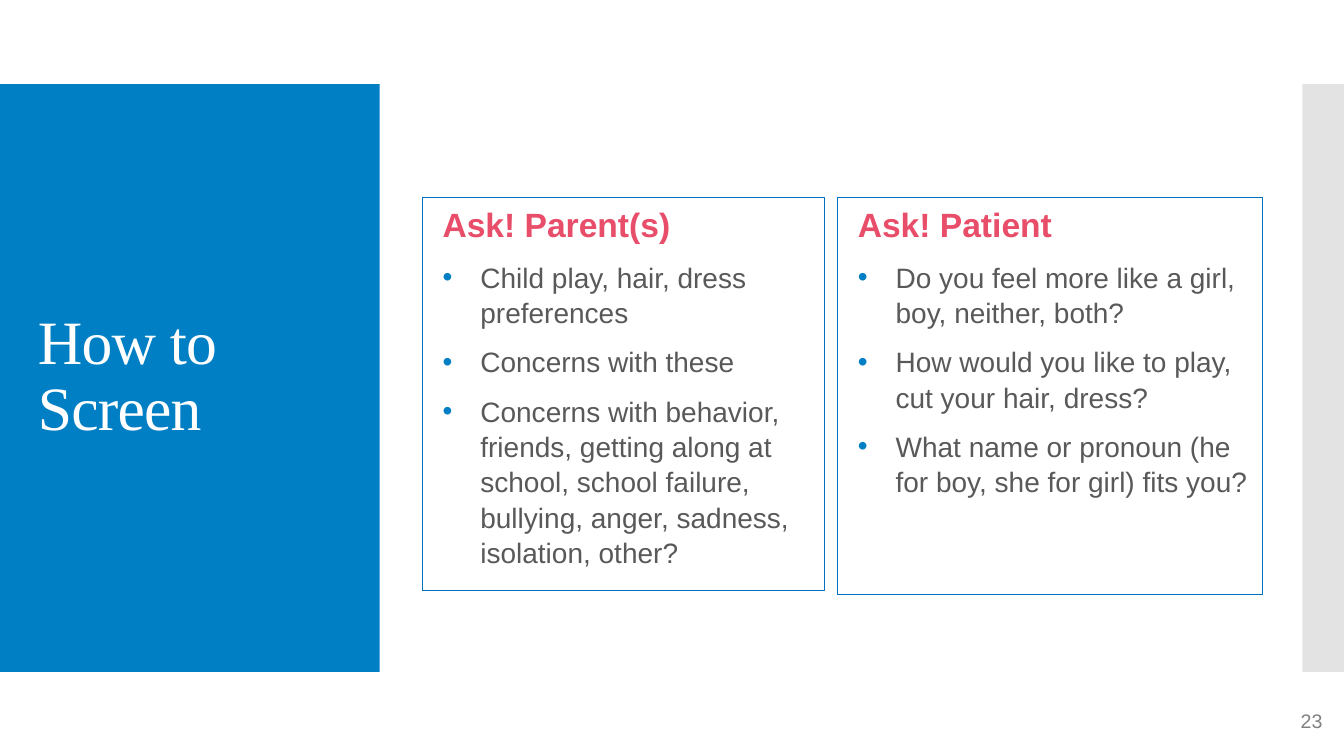
import pptx
import pptx.util
import pptx.dml.color
import pptx.enum.shapes
import pptx.enum.text
import pptx.oxml
import pptx.oxml.ns

Pt = pptx.util.Pt
ALIGN = pptx.enum.text.PP_ALIGN
ANCHOR = pptx.enum.text.MSO_ANCHOR

# Content
TITLE = "How to Screen"
PAGE = "23"
CARDS = [
    ("Ask! Parent(s)", [
        "Child play, hair, dress preferences",
        "Concerns with these",
        "Concerns with behavior, friends, getting along at school, "
        "school failure, bullying, anger, sadness, isolation, other?",
    ]),
    ("Ask! Patient", [
        "Do you feel more like a girl, boy, neither, both?",
        "How would you like to play, cut your hair, dress?",
        "What name or pronoun (he for boy, she for girl) fits you?",
    ]),
]

# Theme: colours and type
THEME = {
    "blue": "007FC4", "edge": "0070C0", "grey": "C8C8C8",
    "title": {"name": "Times New Roman", "size": 44, "color": "FFFFFF"},
    "head": {"name": "Arial", "size": 24, "color": "E84D69", "bold": True},
    "body": {"name": "Arial", "size": 20, "color": "595959", "bold": False},
    "page": {"name": "Arial", "size": 14, "color": "808080"},
}

# Layout in points: left, top, width, height
WIDE, HIGH = 960, 540
BAND_TOP, BAND_HIGH = 60, 420
PANEL, STRIP = 271.2, 29.8
CARD_TOP = 141
SPOTS = [(301.7, 287.3, 280.8), (598.3, 303.8, 283.7)]
INDENT = 27


def paint(color, value):
    color.rgb = pptx.dml.color.RGBColor.from_string(value)


def style(font, look):
    for key, value in look.items():
        if key == "color":
            paint(font.color, value)
        else:
            setattr(font, key, Pt(value) if key == "size" else value)


def block(box, fill=None, line=None):
    shape = slide.shapes.add_shape(
        pptx.enum.shapes.MSO_SHAPE.RECTANGLE, *map(Pt, box))
    shape.shadow.inherit = False
    if fill:
        shape.fill.solid()
        paint(shape.fill.fore_color, fill)
    else:
        shape.fill.background()
    if line:
        paint(shape.line.color, line)
        shape.line.width = Pt(0.75)
    else:
        shape.line.fill.background()
    return shape


def frame(shape, anchor, left=7.2):
    text = shape.text_frame
    form = {"word_wrap": True, "vertical_anchor": anchor,
            "margin_left": Pt(left), "margin_right": Pt(7.2),
            "margin_top": Pt(3.6), "margin_bottom": Pt(3.6)}
    for key, value in form.items():
        setattr(text, key, value)
    return text


def write(para, words, look, **form):
    for key, value in form.items():
        setattr(para, key, value)
    run = para.add_run()
    run.text = words
    style(run.font, THEME[look])
    return run


def label(box, words, look, anchor, **form):
    text = frame(slide.shapes.add_textbox(*map(Pt, box)), anchor)
    return write(text.paragraphs[0], words, look, **form)


def bullet(para):
    props = para._p.get_or_add_pPr()
    props.set("marL", str(Pt(INDENT)))
    props.set("indent", str(-Pt(INDENT)))
    space = pptx.oxml.ns.nsdecls("a")
    for part in (f'<a:buClr {space}><a:srgbClr val="{THEME["blue"]}"/></a:buClr>',
                 f'<a:buFont {space} typeface="Arial"/>',
                 f'<a:buChar {space} char="•"/>'):
        props.append(pptx.oxml.parse_xml(part))


deck = pptx.Presentation()
deck.slide_width, deck.slide_height = Pt(WIDE), Pt(HIGH)
slide = deck.slides.add_slide(deck.slide_layouts[6])

# Side panel and half-clear right strip
block((0, BAND_TOP, PANEL, BAND_HIGH), THEME["blue"])
strip = block((WIDE - STRIP, BAND_TOP, STRIP, BAND_HIGH), THEME["grey"])
tint = strip._element.spPr.find(".//" + pptx.oxml.ns.qn("a:srgbClr"))
tint.append(pptx.oxml.parse_xml(
    f'<a:alpha {pptx.oxml.ns.nsdecls("a")} val="50000"/>'))

# Title
run = label((20, 88.6, 231.8, 362.2), TITLE, "title", ANCHOR.MIDDLE,
            line_spacing=0.9)
run.font._element.set("spc", "-60")

# Question cards
for (head, items), (left, width, height) in zip(CARDS, SPOTS):
    card = block((left, CARD_TOP, width, height), line=THEME["edge"])
    text = frame(card, ANCHOR.TOP, left=14.4)
    write(text.paragraphs[0], head, "head",
          alignment=ALIGN.LEFT, line_spacing=1.05)
    for item in items:
        para = text.add_paragraph()
        para.space_before = Pt(10)
        para.line_spacing = 1.05
        bullet(para)
        write(para, item, "body", alignment=ALIGN.LEFT)

# Page number
label((678.2, 500.4, 273.6, 28.8), PAGE, "page", ANCHOR.MIDDLE,
      alignment=ALIGN.RIGHT)

deck.save("out.pptx")
